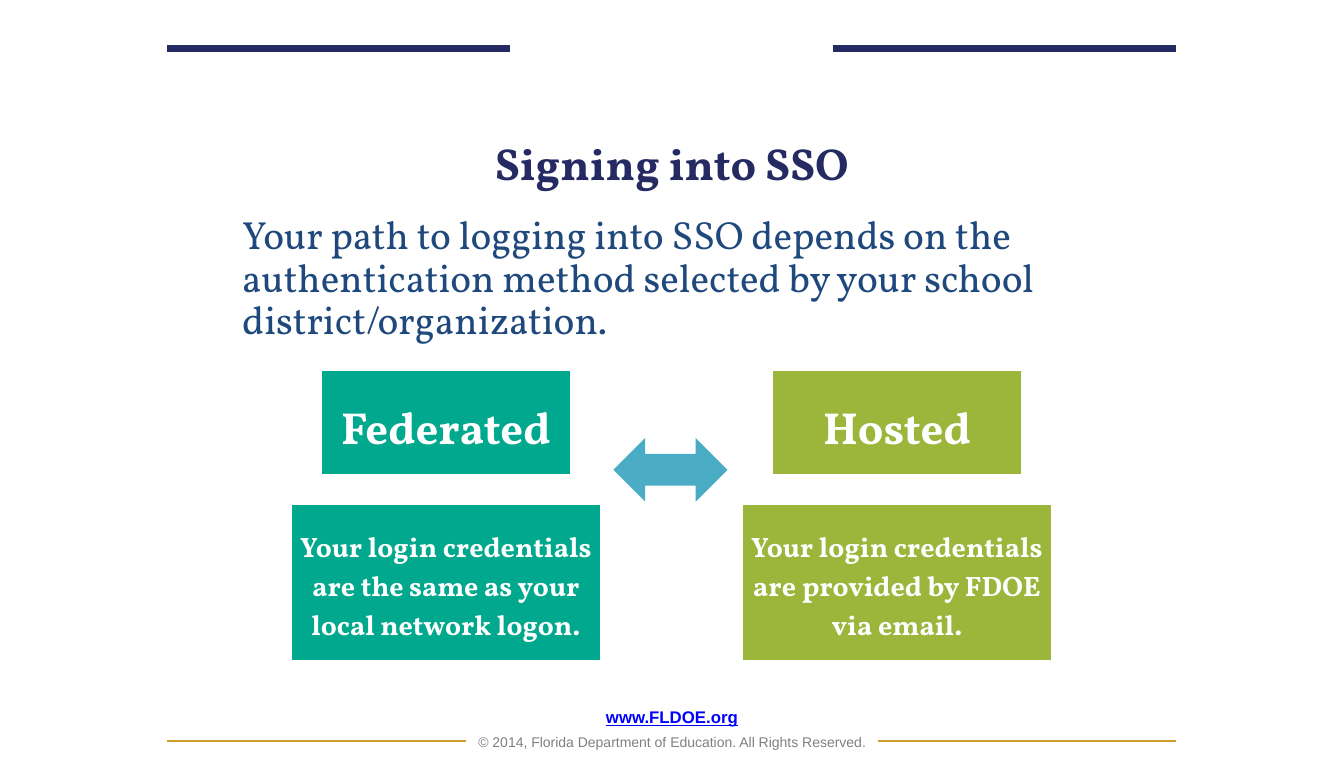
from pptx import Presentation
from pptx import util as u
from pptx.dml.color import RGBColor
from pptx.enum import shapes, text
from pptx.oxml.ns import qn
from lxml import etree

NAVY = RGBColor(0x26, 0x2A, 0x63)
GOLD = RGBColor(0xCD, 0x9D, 0x2C)
BLUE = RGBColor(0x1F, 0x49, 0x7D)
LINK = RGBColor(0x00, 0x00, 0xFF)
GRAY = RGBColor(0x80, 0x80, 0x80)
TEAL = RGBColor(0x00, 0xA8, 0x8D)
GREEN = RGBColor(0x9C, 0xB6, 0x3C)
AQUA = RGBColor(0x4B, 0xAC, 0xC6)
WHITE = RGBColor(0xFF, 0xFF, 0xFF)

SERIF, SANS = "Vollkorn", "Arial"
CENTER, LEFT = text.PP_ALIGN.CENTER, text.PP_ALIGN.LEFT
TOP, MIDDLE, BOTTOM = (text.MSO_ANCHOR.TOP, text.MSO_ANCHOR.MIDDLE,
                       text.MSO_ANCHOR.BOTTOM)


def write(shape, words, size, color, font=SERIF, bold=True, under=False,
          align=CENTER, anchor=MIDDLE, space=0.9, before=0, more=False):
    frame = shape.text_frame
    frame.auto_size = text.MSO_AUTO_SIZE.NONE
    frame.word_wrap = True
    frame.vertical_anchor = anchor
    frame.margin_left = frame.margin_right = u.Inches(0.05)
    frame.margin_top = frame.margin_bottom = u.Inches(0.05)
    para = frame.add_paragraph() if more else frame.paragraphs[0]
    para.text = words
    para.alignment = align
    para.line_spacing = space
    para.space_before = u.Pt(before)
    props = para._p.get_or_add_pPr()
    props.set("marL", "0")
    props.set("indent", "0")
    etree.SubElement(props, qn("a:buNone"))
    para.font.name = font
    para.font.size = u.Pt(size)
    para.font.bold = bold
    para.font.underline = under
    para.font.color.rgb = color


def place(shape, *box):
    shape.left, shape.top, shape.width, shape.height = map(u.Inches, box)


deck = Presentation()
deck.slide_width = u.Inches(13.32)
deck.slide_height = u.Inches(7.5)
slide = deck.slides.add_slide(deck.slide_layouts[1])
items = slide.shapes

for start, end, y, color, width in [
    (1.66, 5.05, 0.48, NAVY, 5),
    (8.26, 11.66, 0.48, NAVY, 5),
    (1.66, 4.62, 7.34, GOLD, 1),
    (8.7, 11.66, 7.34, GOLD, 1),
]:
    rule = items.add_connector(shapes.MSO_CONNECTOR.STRAIGHT, u.Inches(start),
                               u.Inches(y), u.Inches(end), u.Inches(y))
    rule.line.color.rgb = color
    rule.line.width = u.Pt(width)
    etree.SubElement(rule._element.spPr, qn("a:effectLst"))

foot = items.add_textbox(0, 0, 0, 0)
place(foot, 2.35, 6.98, 8.62, 0.51)
write(foot, "www.FLDOE.org", 12, LINK, font=SANS, under=True, anchor=BOTTOM)
write(foot, "© 2014, Florida Department of Education. All Rights Reserved.",
      10, GRAY, font=SANS, bold=False, anchor=BOTTOM, before=6, more=True)

title = items.title
place(title, 2.35, 1.06, 8.62, 0.87)
write(title, "Signing into SSO", 32, NAVY, anchor=BOTTOM)

body = slide.placeholders[1]
place(body, 2.35, 2.09, 8.62, 4.76)
write(body, "Your path to logging into SSO depends on the authentication "
      "method selected by your school district/organization.",
      28, BLUE, bold=False, align=LEFT, anchor=TOP)

for mid, color, name, note in [
    (4.42, TEAL, "Federated",
     "Your login credentials are the same as your local network logon."),
    (8.89, GREEN, "Hosted",
     "Your login credentials are provided by FDOE via email."),
]:
    for words, size, top, width, height in [
        (name, 32, 3.67, 2.48, 1.03),
        (note, 20, 5, 3.07, 1.55),
    ]:
        card = items.add_shape(shapes.MSO_SHAPE.RECTANGLE, 0, 0, 0, 0)
        place(card, mid - width / 2, top, width, height)
        card.shadow.inherit = False
        card.fill.solid()
        card.fill.fore_color.rgb = color
        card.line.color.rgb = WHITE
        card.line.width = u.Pt(1)
        write(card, words, size, WHITE, space=1.15)

arrow = items.add_shape(shapes.MSO_SHAPE.LEFT_RIGHT_ARROW, 0, 0, 0, 0)
place(arrow, 6.08, 4.34, 1.13, 0.63)
arrow.shadow.inherit = False
arrow.fill.solid()
arrow.fill.fore_color.rgb = AQUA
arrow.line.fill.background()

deck.save("out.pptx")
